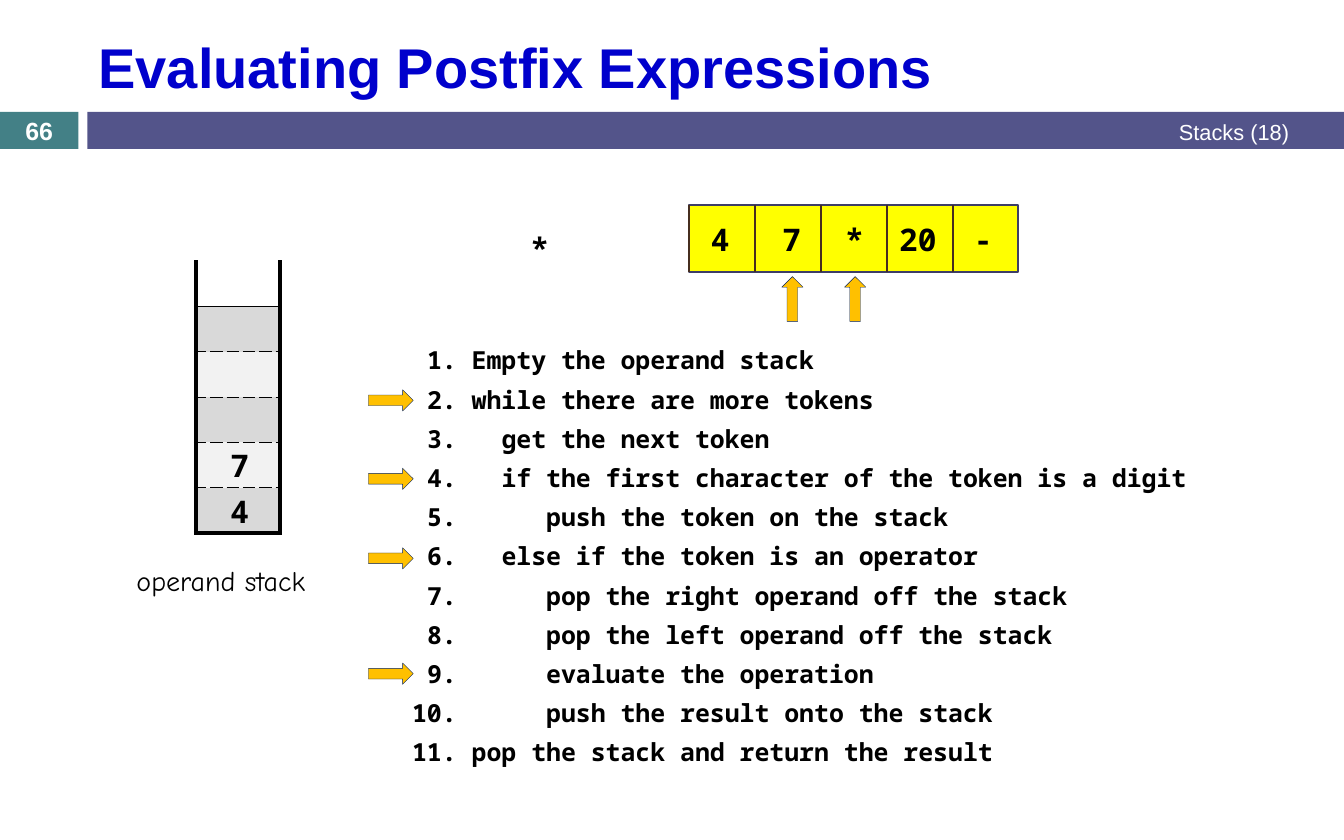
from lxml import etree
from pptx import Presentation
from pptx import util as u
from pptx.dml import color
from pptx.enum import shapes, text
from pptx.oxml import ns

MONO = "Noto Sans Mono"
CHAR = 0.133
STEPS = [
    (0, "Empty the operand stack"),
    (0, "while there are more tokens"),
    (2, "get the next token"),
    (2, "if the first character of the token is a digit"),
    (5, "push the token on the stack"),
    (2, "else if the token is an operator"),
    (5, "pop the right operand off the stack"),
    (5, "pop the left operand off the stack"),
    (5, "evaluate the operation"),
    (5, "push the result onto the stack"),
    (0, "pop the stack and return the result"),
]


def rgb(value):
    return color.RGBColor.from_string(value)


def box(*lengths):
    return [u.Inches(n) for n in lengths]


class Deck:
    def __init__(self, s):
        self.s = s

    def style(self, p, size, font="Arial", fill="000000", bold=False):
        for r in p.runs:
            r.font.size = u.Pt(size)
            r.font.name = font
            r.font.bold = bold
            r.font.color.rgb = rgb(fill)

    def place(self, sp, at):
        sp.left, sp.top, sp.width, sp.height = box(*at)

    def title(self, at, words):
        sp = self.s.shapes.title
        self.place(sp, at)
        tf = sp.text_frame
        tf.text = words
        tf.vertical_anchor = text.MSO_ANCHOR.MIDDLE
        tf.paragraphs[0].alignment = text.PP_ALIGN.LEFT
        self.style(tf.paragraphs[0], 36, fill="0000CC", bold=True)

    def steps(self, at, lines):
        sp = self.s.placeholders[1]
        self.place(sp, at)
        tf = sp.text_frame
        tf.auto_size = text.MSO_AUTO_SIZE.NONE
        tf.text = "\n".join(f"{n}.\t{words}" for n, (_, words) in enumerate(lines, 1))
        for n, (p, (depth, _)) in enumerate(zip(tf.paragraphs, lines), 1):
            start = 2 - len(str(n))
            pPr = p._p.get_or_add_pPr()
            pPr.set("marL", str(u.Inches((4 + depth) * CHAR)))
            pPr.set("indent", str(u.Inches((start - 4 - depth) * CHAR)))
            p.line_spacing = u.Pt(19.2)
            p.space_before, p.space_after = u.Pt(0), u.Pt(6)
            etree.SubElement(pPr, ns.qn("a:buNone"))
            self.style(p, 16, MONO, bold=True)

    def label(self, at, words, align, size, font="Arial", fill="000000",
              bold=False, inset=0.1, anchor=text.MSO_ANCHOR.MIDDLE):
        tf = self.s.shapes.add_textbox(*box(*at)).text_frame
        tf.word_wrap = True
        tf.margin_left = tf.margin_right = u.Inches(inset)
        tf.vertical_anchor = anchor
        tf.text = words
        p = tf.paragraphs[0]
        p.alignment = align
        self.style(p, size, font, fill, bold)
        return p

    def token(self, left, top, words, width=0.34):
        p = self.label((left, top, width, 0.44), words, text.PP_ALIGN.CENTER, 20,
                       MONO, bold=True, inset=0, anchor=text.MSO_ANCHOR.TOP)
        p.line_spacing = u.Pt(24.5)

    def shape(self, kind, at, fill, line=None, width=0):
        sp = self.s.shapes.add_shape(kind, *box(*at))
        sp.shadow.inherit = False
        sp.fill.solid()
        sp.fill.fore_color.rgb = rgb(fill)
        if line:
            sp.line.color.rgb = rgb(line)
            sp.line.width = u.Pt(width)
        else:
            sp.line.fill.background()

    def arrow(self, kind, at):
        self.shape(kind, at, "FFC000", "002060", 0.25)

    def divider(self, x, top, bottom):
        c = self.s.shapes.add_connector(shapes.MSO_CONNECTOR.STRAIGHT,
                                        *box(x, top, x, bottom))
        c.line.color.rgb = rgb("462E1F")
        c.line.width = u.Pt(1.5)
        etree.SubElement(c._element.spPr, ns.qn("a:effectLst"))

    def border(self, cell, side, width, dash="solid"):
        ln = etree.Element(ns.qn(f"a:ln{side}"), w=str(u.Pt(width)))
        fill = etree.SubElement(ln, ns.qn("a:solidFill"))
        etree.SubElement(fill, ns.qn("a:srgbClr"), val="000000")
        etree.SubElement(ln, ns.qn("a:prstDash"), val=dash)
        cell._tc.get_or_add_tcPr().append(ln)

    def stack(self, at, fills):
        table = self.s.shapes.add_table(len(fills), 1, *box(*at)).table
        table.first_row = table.horz_banding = False
        edges = [None, (0.5,)] + [(0.5, "lgDash")] * (len(fills) - 2) + [(3,)]
        for i, fill in enumerate(fills):
            cell = table.cell(i, 0)
            self.border(cell, "L", 3)
            self.border(cell, "R", 3)
            if edges[i]:
                self.border(cell, "T", *edges[i])
            self.border(cell, "B", *edges[i + 1])
            cell.fill.solid()
            cell.fill.fore_color.rgb = rgb(fill)


def main():
    prs = Presentation()
    prs.slide_width, prs.slide_height = box(12, 7.5)
    d = Deck(prs.slides.add_slide(prs.slide_layouts[1]))
    kinds, align = shapes.MSO_SHAPE, text.PP_ALIGN

    d.shape(kinds.RECTANGLE, (0, 1, 0.7, 0.33), "438086")
    d.shape(kinds.RECTANGLE, (0.78, 1, 11.22, 0.33), "53548A")
    d.title((0.78, 0.19, 10.7, 0.8), "Evaluating Postfix Expressions")
    d.label((4.5, 1.01, 7.11, 0.33), "Stacks (18)", align.RIGHT, 14, fill="FFFFFF")
    d.label((0, 1, 0.7, 0.33), "66", align.CENTER, 16, fill="FFFFFF", bold=True)

    d.stack((1.75, 2.33, 0.75, 2.43),
            ["FFFFFF", "D9D9D9", "F2F2F2", "D9D9D9", "F2F2F2", "D9D9D9"])
    d.token(1.97, 3.93, "7")
    d.token(1.97, 4.34, "4")
    d.label((1.12, 4.98, 2.02, 0.4), "operand stack", align.LEFT, 18, "Comic Neue")

    d.steps((3.58, 3.03, 7.42, 3.9), STEPS)
    for middle in (3.57, 4.27, 4.98, 6.01):
        d.arrow(kinds.RIGHT_ARROW, (3.29, middle - 0.09, 0.4, 0.19))

    d.shape(kinds.RECTANGLE, (6.15, 1.83, 2.94, 0.6), "FFFF00", "3D3E66", 1.5)
    for i in range(5):
        d.divider(6.15 + 0.59 * i, 1.83, 2.43)
    for left, words in ((6.26, "4"), (6.9, "7"), (7.46, "*"), (8.61, "-")):
        d.token(left, 1.91, words)
    d.token(7.93, 1.91, "20", 0.53)
    d.token(4.65, 1.99, "*")
    for left in (6.98, 7.54):
        d.arrow(kinds.UP_ARROW, (left, 2.47, 0.19, 0.4))

    prs.save("out.pptx")


if __name__ == "__main__":
    main()
